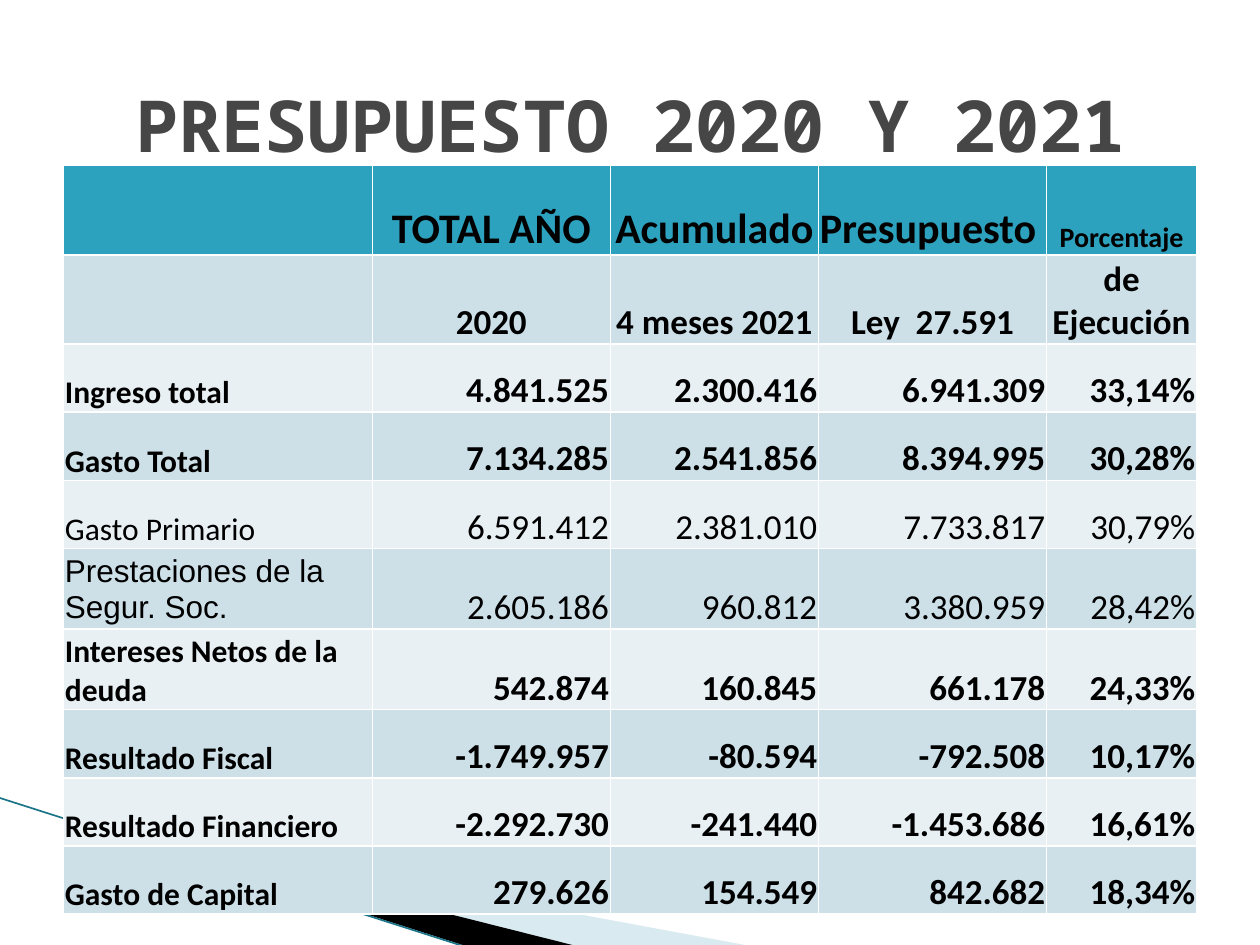
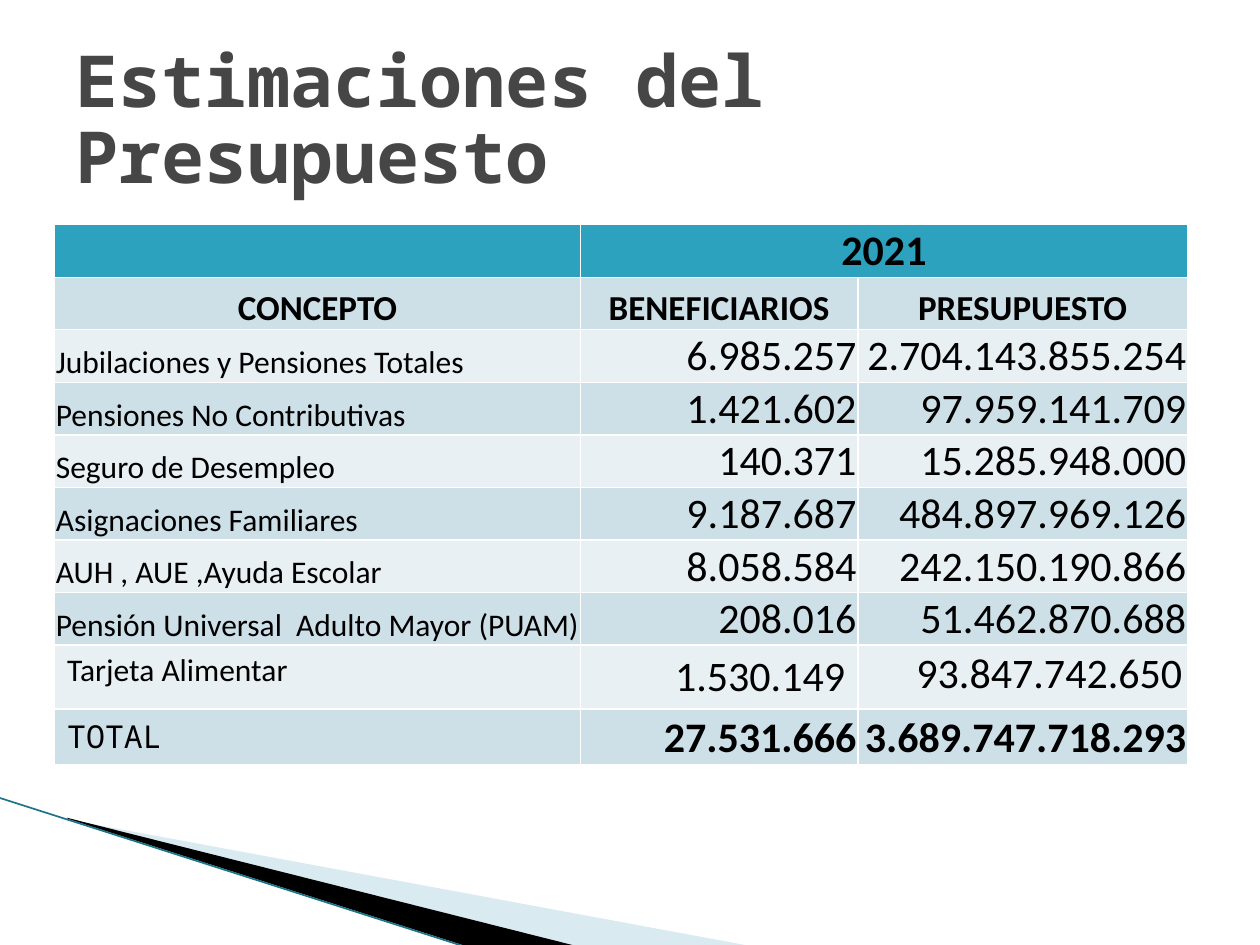
"""Build two budget slides: execution 2020-2021 and the 2021 estimates."""
from lxml import etree
from pptx import Presentation
from pptx.dml.color import RGBColor
from pptx.enum import text
from pptx.oxml import ns
from pptx.util import Pt

COLORS = {
    "title": "464646", "text": "000000", "header": "2DA2BF",
    "dark band": "CDE0E8", "light band": "E8F0F4",
    "pale wedge": "A0CBDC", "black wedge": "000000", "edge": "1B7488",
}
BODY_FONT, TITLE_FONT = "Calibri", "Noto Sans Mono"
LEFT, CENTER, RIGHT = text.PP_ALIGN.LEFT, text.PP_ALIGN.CENTER, text.PP_ALIGN.RIGHT


def color(name):
    return RGBColor.from_string(COLORS[name])


def set_margins(cell, left, top, right, bottom):
    cell.margin_left, cell.margin_top = Pt(left), Pt(top)
    cell.margin_right, cell.margin_bottom = Pt(right), Pt(bottom)


pages = [
    {
        "title": "PRESUPUESTO 2020 Y 2021", "title at": (36.7, 25.9),
        "title align": CENTER, "title spacing": 1.0, "title inset": 3.6,
        "table at": (36.4, 94.6), "value size": 20,
        "columns": [176.4, 136, 119, 130.3, 85.7],
        "heights": [51, 51, 39, 39, 39, 46, 46, 39, 39, 39],
        "bold rows": {2, 3, 6, 7, 8, 9},
        "rows": [
            ("", "TOTAL AÑO", "Acumulado", "Presupuesto", "Porcentaje"),
            ("", "2020", "4 meses 2021", "Ley  27.591", "de Ejecución"),
            ("Ingreso total", "4.841.525", "2.300.416", "6.941.309", "33,14%"),
            ("Gasto Total", "7.134.285", "2.541.856", "8.394.995", "30,28%"),
            ("Gasto Primario", "6.591.412", "2.381.010", "7.733.817", "30,79%"),
            ("Prestaciones de la Segur. Soc.", "2.605.186", "960.812", "3.380.959", "28,42%"),
            ("Intereses Netos de la deuda", "542.874", "160.845", "661.178", "24,33%"),
            ("Resultado Fiscal", "-1.749.957", "-80.594", "-792.508", "10,17%"),
            ("Resultado Financiero", "-2.292.730", "-241.440", "-1.453.686", "16,61%"),
            ("Gasto de Capital", "279.626", "154.549", "842.682", "18,34%"),
        ],
    },
    {
        "title": "Estimaciones del Presupuesto", "title at": (36, 21.6),
        "title align": LEFT, "title spacing": 0.88, "title inset": 10.5,
        "table at": (31.2, 128.4), "value size": 24,
        "columns": [300.5, 158.5, 188.5],
        "heights": [30] * 10,
        "bold rows": {9},
        "rows": [
            ("", "2021", ""),
            ("CONCEPTO", "BENEFICIARIOS", "PRESUPUESTO"),
            ("Jubilaciones y Pensiones Totales", "6.985.257", "2.704.143.855.254"),
            ("Pensiones No Contributivas", "1.421.602", "97.959.141.709"),
            ("Seguro de Desempleo", "140.371", "15.285.948.000"),
            ("Asignaciones Familiares", "9.187.687", "484.897.969.126"),
            ("AUH , AUE ,Ayuda Escolar", "8.058.584", "242.150.190.866"),
            ("Pensión Universal  Adulto Mayor (PUAM)", "208.016", "51.462.870.688"),
            ("Tarjeta Alimentar", "1.530.149", "93.847.742.650"),
            ("TOTAL", "27.531.666", "3.689.747.718.293"),
        ],
    },
]

presentation = Presentation()
presentation.slide_width, presentation.slide_height = Pt(720), Pt(540)
layout = presentation.slide_layouts[5]
for placeholder in list(layout.placeholders)[1:]:
    placeholder.element.getparent().remove(placeholder.element)

tables = []
for page in pages:
    slide = presentation.slides.add_slide(layout)
    title = slide.shapes.title
    title.left, title.top = map(Pt, page["title at"])
    title.width, title.height = Pt(648), Pt(90)
    frame = title.text_frame
    frame.text = page["title"]
    frame.auto_size = text.MSO_AUTO_SIZE.NONE
    frame.word_wrap = True
    frame.vertical_anchor = text.MSO_ANCHOR.MIDDLE
    frame.margin_top = Pt(page["title inset"])
    paragraph = frame.paragraphs[0]
    paragraph.alignment = page["title align"]
    paragraph.line_spacing = page["title spacing"]
    font = paragraph.runs[0].font
    font.name, font.size, font.bold = TITLE_FONT, Pt(41), True
    font.color.rgb = color("title")

    rows, columns, heights = page["rows"], page["columns"], page["heights"]
    table_left, table_top = page["table at"]
    table = slide.shapes.add_table(
        len(rows), len(columns), Pt(table_left), Pt(table_top),
        Pt(sum(columns)), Pt(sum(heights))).table
    tables.append(table)
    for column, width in zip(table.columns, columns):
        column.width = Pt(width)
    for row_index, values in enumerate(rows):
        table.rows[row_index].height = Pt(heights[row_index])
        band = "header" if row_index == 0 else "dark band" if row_index % 2 else "light band"
        for column_index, value in enumerate(values):
            cell = table.cell(row_index, column_index)
            cell.fill.solid()
            cell.fill.fore_color.rgb = color(band)
            if not value:
                continue
            cell.text = value
            cell.vertical_anchor = text.MSO_ANCHOR.BOTTOM
            set_margins(cell, 0.72, 0.72, 0.72, 0)
            paragraph = cell.text_frame.paragraphs[0]
            font = paragraph.runs[0].font
            if row_index < 2:
                paragraph.alignment, size = CENTER, (24, 20)[row_index]
            elif column_index == 0:
                paragraph.alignment, size = LEFT, 18
            else:
                paragraph.alignment, size = RIGHT, page["value size"]
            font.name, font.size = BODY_FONT, Pt(size)
            font.bold = row_index < 2 or row_index in page["bold rows"]
            font.color.rgb = color("text")
    slide.shapes.element.append(title.element)

execution, estimates = tables
execution.cell(0, 3).text_frame.paragraphs[0].alignment = LEFT
execution.cell(0, 4).text_frame.paragraphs[0].runs[0].font.size = Pt(16)
benefits = execution.cell(5, 0)
benefits.vertical_anchor = text.MSO_ANCHOR.MIDDLE
benefits.text_frame.paragraphs[0].runs[0].font.name = "Arial"

estimates.cell(0, 1).merge(estimates.cell(0, 2))
for row_index, column_index in ((8, 0), (8, 1), (9, 0)):
    cell = estimates.cell(row_index, column_index)
    cell.vertical_anchor = text.MSO_ANCHOR.TOP
    set_margins(cell, 7.2, 3.6, 7.2, 3.6)
card_budget = estimates.cell(8, 2)
card_budget.vertical_anchor = text.MSO_ANCHOR.TOP
set_margins(card_budget, 0, 0, 3, 0)
card_budget.text_frame.paragraphs[0].line_spacing = 1.07
total_font = estimates.cell(9, 0).text_frame.paragraphs[0].runs[0].font
total_font.name, total_font.bold = TITLE_FONT, False

wedges = [
    ("pale wedge", [(39.6, 468.5), (428.4, 540.5), (328.5, 540.5), (39.6, 468)]),
    ("black wedge", [(38.2, 467.3), (329, 540.5), (268, 541.2), (38.9, 468)]),
]
shapes = presentation.slides[0].shapes
for name, points in wedges:
    corners = [(Pt(x), Pt(y)) for x, y in points]
    builder = shapes.build_freeform(*corners[0], scale=1.0)
    builder.add_line_segments(corners[1:], close=True)
    wedge = builder.convert_to_shape()
    wedge.shadow.inherit = False
    wedge.fill.solid()
    wedge.fill.fore_color.rgb = color(name)
    wedge.line.fill.background()
    if name == "pale wedge":
        fill_color = wedge.element.spPr.find(".//" + ns.qn("a:srgbClr"))
        etree.SubElement(fill_color, ns.qn("a:alpha"), val="40000")
    layout.shapes.element.append(wedge.element)

edge = shapes.add_connector(1, Pt(-0.7), Pt(455.8), Pt(267.1), Pt(541.4))
edge.line.color.rgb = color("edge")
edge.line.width = Pt(0.95)
etree.SubElement(edge.element.spPr, ns.qn("a:effectLst"))
layout.shapes.element.append(edge.element)

presentation.save("out.pptx")
